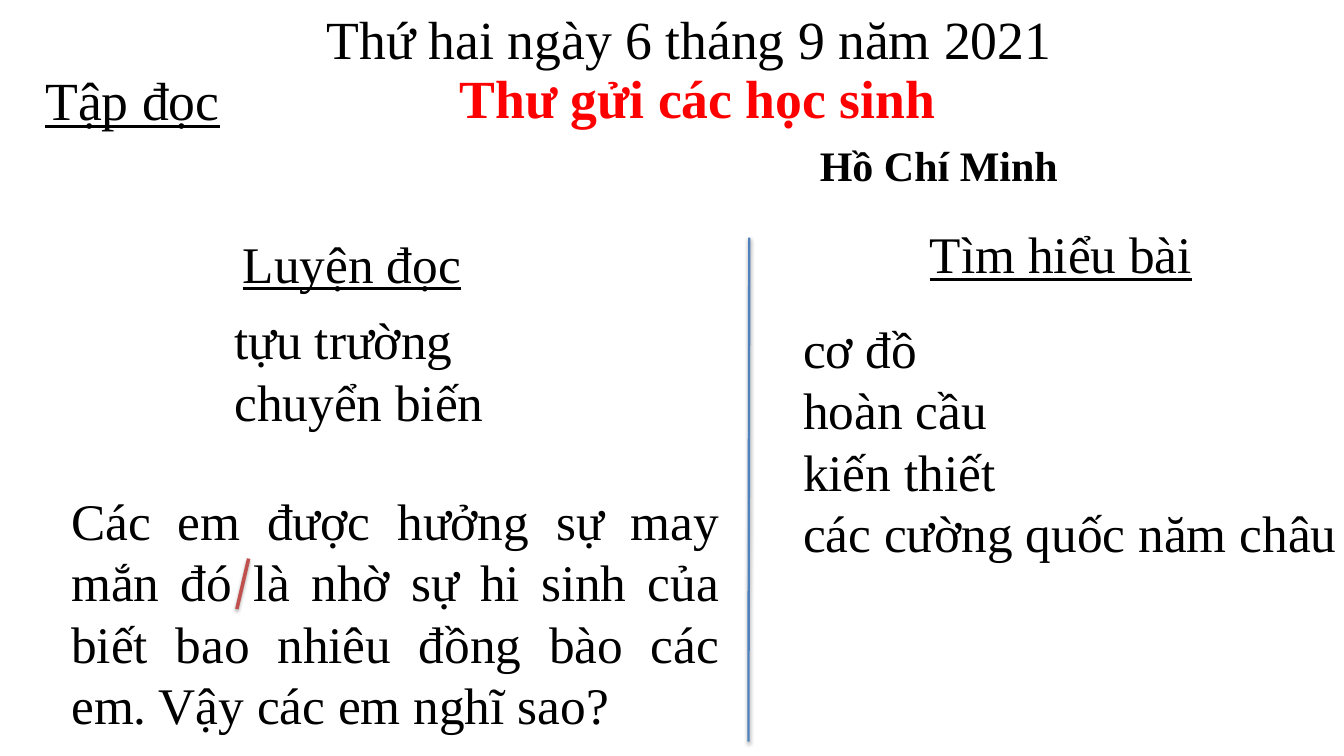
from pptx import Presentation
from pptx.dml.color import RGBColor
from pptx.enum.shapes import MSO_CONNECTOR
from pptx.enum.text import MSO_AUTO_SIZE, PP_ALIGN
from pptx.oxml.ns import qn
from pptx.util import Inches, Pt
from lxml.etree import SubElement


def color(code):
    return RGBColor.from_string(code)


def put_text(slide, box, lines, wrap=False, align=PP_ALIGN.LEFT, pad=(0.14, 0.07),
             size=44, ink="000000", **style):
    frame = slide.shapes.add_textbox(*map(Inches, box)).text_frame
    side, edge = map(Inches, pad)
    layout = {"word_wrap": wrap, "auto_size": MSO_AUTO_SIZE.SHAPE_TO_FIT_TEXT,
              "margin_left": side, "margin_right": side,
              "margin_top": edge, "margin_bottom": edge}
    for name, value in layout.items():
        setattr(frame, name, value)
    for row, line in enumerate(lines):
        para = frame.paragraphs[0] if row == 0 else frame.add_paragraph()
        para.alignment = align
        run = para.add_run()
        run.text = line
        look = {"name": "Times New Roman", "size": Pt(size), **style}
        for name, value in look.items():
            setattr(run.font, name, value)
        run.font.color.rgb = color(ink)
    return frame


def put_line(slide, ends, ink, width, drop, alpha):
    line = slide.shapes.add_connector(MSO_CONNECTOR.STRAIGHT, *map(Inches, ends))
    line.line.color.rgb = color(ink)
    line.line.width = Pt(width)
    effect = SubElement(line._element.spPr, qn("a:effectLst"))
    shadow = SubElement(effect, qn("a:outerShdw"), blurRad=str(Pt(3.1)),
                        dist=str(Pt(drop)), dir="5400000", rotWithShape="0")
    tint = SubElement(shadow, qn("a:srgbClr"), val="000000")
    SubElement(tint, qn("a:alpha"), val=str(alpha * 1000))


def draw_header(slide, left, top):
    put_text(slide, (left + 3.35, top, 9, 0.92),
             ["Thứ hai ngày 6 tháng 9 năm 2021"], size=46)
    put_text(slide, (left, top + 0.73, 2.38, 0.92), ["Tập đọc"],
             size=46, underline=True)
    title = put_text(slide, (left + 4.93, top + 0.7, 7.48, 1.69),
                     ["Thư gửi các học sinh", "Hồ Chí Minh"],
                     size=46, ink="FF0000", bold=True)
    author = title.paragraphs[1]
    author.space_before = Pt(9)
    author._p.get_or_add_pPr().set("marL", str(Inches(4.29)))
    font = author.runs[0].font
    font.size = Pt(36)
    font.color.rgb = color("000000")


def draw_reading(slide, left, top):
    put_text(slide, (left + 2, top, 2.91, 0.88), ["Luyện đọc"], underline=True)
    put_text(slide, (left + 1.9, top + 0.91, 3.29, 1.63),
             ["tựu trường", "chuyển biến"])
    put_text(slide, (left, top + 3.08, 7.92, 3.06),
             ["Các em được hưởng sự may mắn đó là nhờ sự hi sinh của biết bao "
              "nhiêu đồng bào các em. Vậy các em nghĩ sao?"],
             wrap=True, align=PP_ALIGN.JUSTIFY, pad=(0.1, 0.05))
    put_line(slide, (left + 2.21, top + 3.96, left + 2.07, top + 4.56),
             "C0504D", 3, 1.8, 35)


def draw_study(slide, left, top):
    put_text(slide, (left + 1.51, top, 3.44, 0.88), ["Tìm hiểu bài"], underline=True)
    put_text(slide, (left, top + 1.12, 6.7, 3.11),
             ["cơ đồ", "hoàn cầu", "kiến thiết", "các cường quốc năm châu"])


def main():
    deck = Presentation()
    deck.slide_width, deck.slide_height = Inches(16), Inches(9)
    slide = deck.slides.add_slide(deck.slide_layouts[6])
    draw_header(slide, 0.4, 0)
    put_line(slide, (8.92, 2.83, 8.91, 8.83), "4F81BD", 2, 1.6, 38)
    draw_reading(slide, 0.75, 2.69)
    draw_study(slide, 9.42, 2.58)
    deck.save("out.pptx")


if __name__ == "__main__":
    main()
